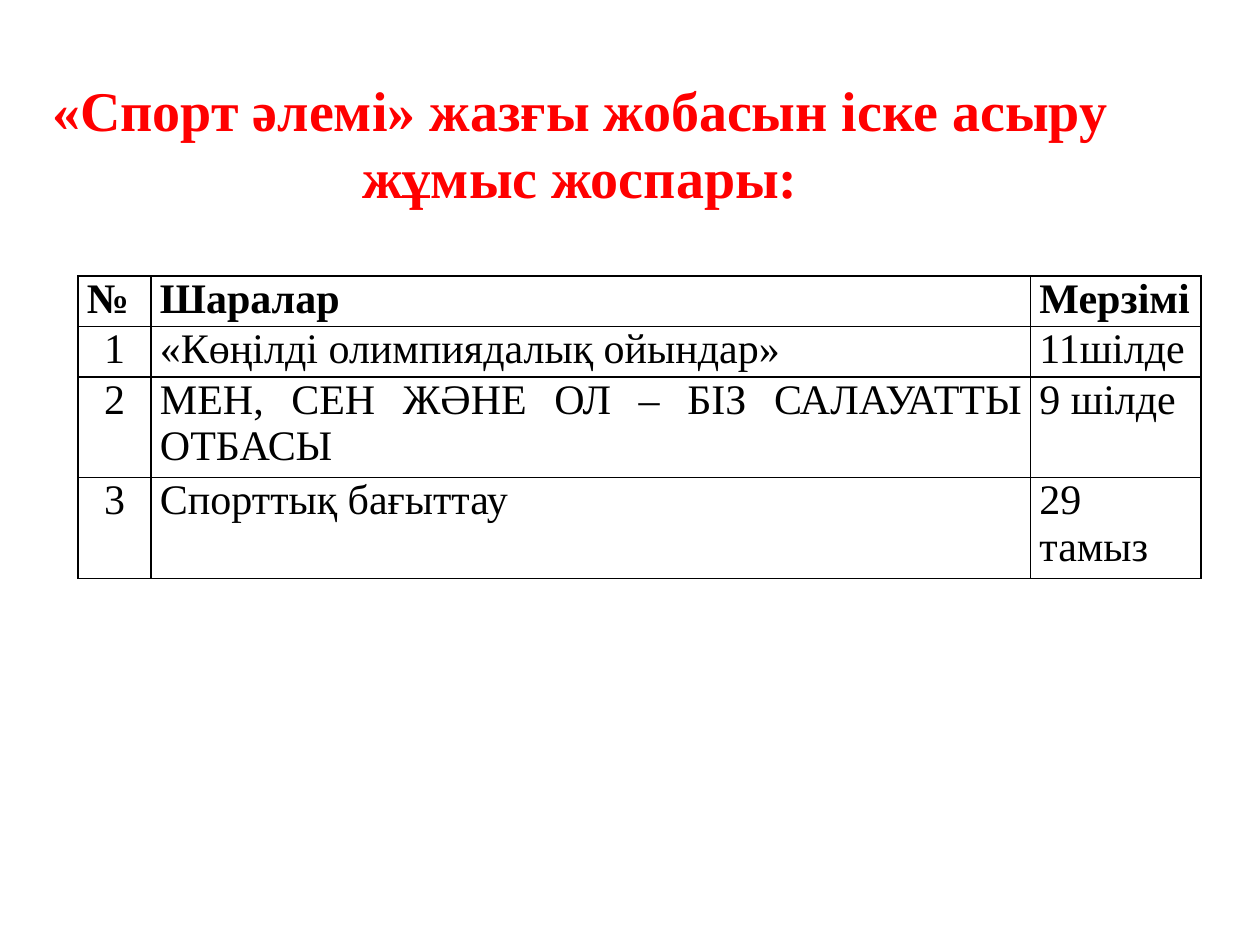
from typing import NamedTuple

from lxml import etree
from pptx import Presentation
from pptx.dml.color import RGBColor
from pptx.enum.text import MSO_ANCHOR as Anchor, PP_ALIGN as Align
from pptx.oxml.ns import qn
from pptx.util import Inches, Pt

FONT = "Times New Roman"
COLORS = {"title": "FF0000", "text": "000000", "border": "000000"}
COLUMN_WIDTHS = (0.58, 6.98, 1.35)


class PlanRow(NamedTuple):
    number: str
    event: str
    date: str
    height: float
    event_align: Align = Align.JUSTIFY
    number_align: Align = Align.CENTER
    bold: bool = False


PLAN = (
    PlanRow("№", "Шаралар", "Мерзімі", 0.4, number_align=Align.JUSTIFY, bold=True),
    PlanRow("1", "«Көңілді олимпиядалық ойындар»", "11шілде", 0.4, Align.LEFT),
    PlanRow("2", "МЕН, СЕН ЖӘНЕ ОЛ – БІЗ САЛАУАТТЫ ОТБАСЫ", "9 шілде", 0.8),
    PlanRow("3", "Спорттық бағыттау", "29 тамыз", 0.8, Align.LEFT),
)


def write(frame, text: str, size: int, color: str, bold: bool, align: Align) -> None:
    frame.text = text
    paragraph = frame.paragraphs[0]
    paragraph.alignment = align
    font = paragraph.runs[0].font
    font.name = FONT
    font.size = Pt(size)
    font.bold = bold
    font.color.rgb = RGBColor.from_string(COLORS[color])


def add_borders(cell) -> None:
    properties = cell._tc.get_or_add_tcPr()
    for position, side in enumerate(("a:lnL", "a:lnR", "a:lnT", "a:lnB")):
        line = etree.Element(qn(side), w=str(Pt(1)))
        fill = etree.SubElement(line, qn("a:solidFill"))
        etree.SubElement(fill, qn("a:srgbClr"), val=COLORS["border"])
        properties.insert(position, line)


def add_title(slide) -> None:
    title = slide.shapes.add_textbox(Inches(0.23), Inches(0.55), Inches(8.75), Inches(1.72))
    frame = title.text_frame
    frame.word_wrap = True
    frame.vertical_anchor = Anchor.TOP
    write(frame, "«Спорт әлемі» жазғы жобасын іске асыру жұмыс жоспары:",
          32, "title", True, Align.CENTER)


def add_plan(slide) -> None:
    table = slide.shapes.add_table(
        len(PLAN), len(COLUMN_WIDTHS), Inches(0.62), Inches(2.19),
        Inches(sum(COLUMN_WIDTHS)), Inches(sum(row.height for row in PLAN)),
    ).table
    for column, width in zip(table.columns, COLUMN_WIDTHS):
        column.width = Inches(width)
    for table_row, row in zip(table.rows, PLAN):
        table_row.height = Inches(row.height)
        texts = (row.number, row.event, row.date)
        aligns = (row.number_align, row.event_align, Align.JUSTIFY)
        for cell, text, align in zip(table_row.cells, texts, aligns):
            cell.margin_left = cell.margin_right = Inches(0.07)
            cell.margin_top = cell.margin_bottom = 0
            cell.fill.background()
            add_borders(cell)
            write(cell.text_frame, text, 24, "text", row.bold, align)


def main() -> None:
    presentation = Presentation()
    presentation.slide_width = Inches(10)
    presentation.slide_height = Inches(7.5)
    slide = presentation.slides.add_slide(presentation.slide_layouts[6])
    add_plan(slide)
    add_title(slide)
    presentation.save("out.pptx")


if __name__ == "__main__":
    main()
